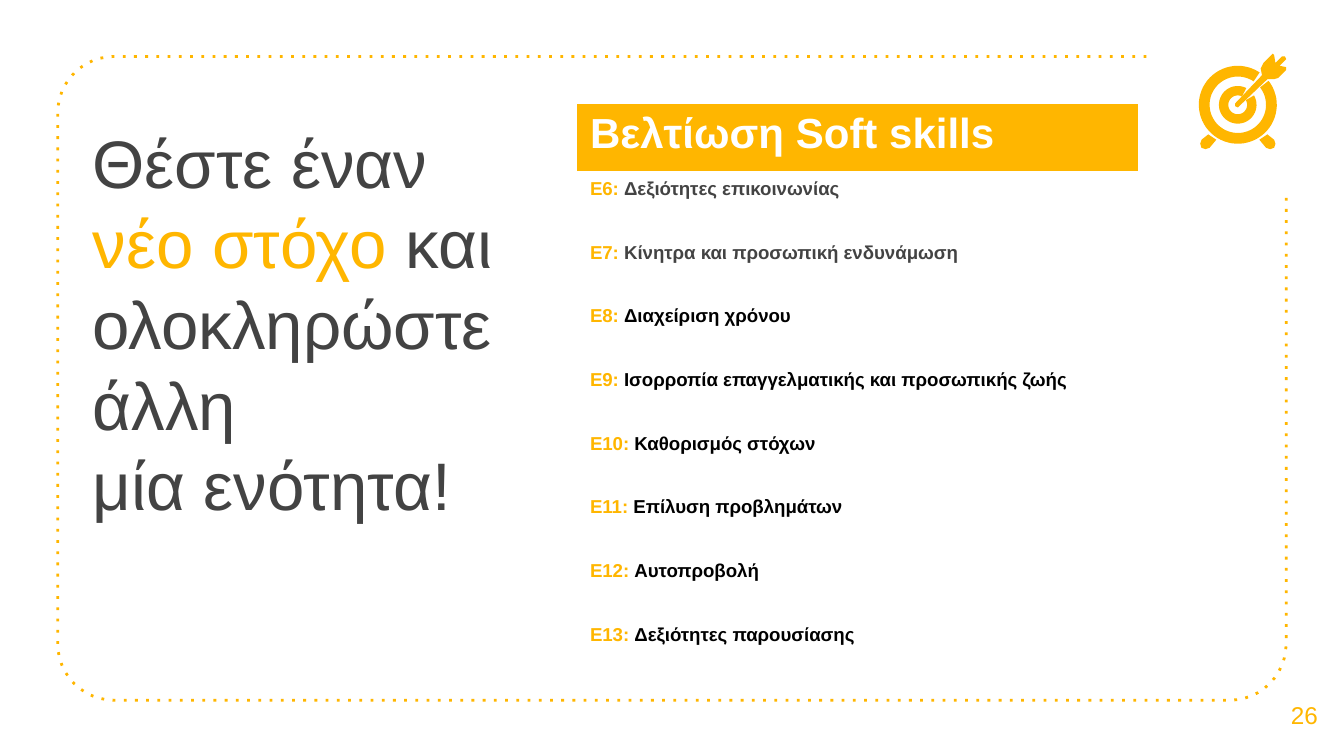
"""Build the soft skills goal slide with its dotted frame, target icon and unit table."""
import math
from pptx import Presentation, util as u
from pptx.dml.color import RGBColor
from pptx.enum import dml, text

GOLD = RGBColor(0xFF, 0xB6, 0x00)
GREY = RGBColor(0x43, 0x43, 0x43)
BLACK = RGBColor(0, 0, 0)
WHITE = RGBColor(0xFF, 0xFF, 0xFF)
FONT = "Arial"

TITLE = [
    [("Θέστε έναν\u00a0", GREY)],
    [("νέο στόχο ", GOLD), ("και", GREY)],
    [("ολοκληρώστε\u00a0άλλη μία\u00a0ενότητα!", GREY)],
]
HEAD = "Βελτίωση\u00a0Soft skills"
UNITS = [
    ("Δεξιότητες επικοινωνίας", GREY),
    ("Κίνητρα και προσωπική ενδυνάμωση", GREY),
    ("Διαχείριση χρόνου", BLACK),
    ("Ισορροπία επαγγελματικής και προσωπικής ζωής", BLACK),
    ("Καθορισμός στόχων", BLACK),
    ("Επίλυση προβλημάτων", BLACK),
    ("Αυτοπροβολή", BLACK),
    ("Δεξιότητες παρουσίασης", BLACK),
]
FIRST = 6
PAGE = "26"

MID = (9.21, 0.78)
RINGS = [(0.29, 0.21, 38, 56), (0.14, 0.07, 30, 63)]
FOOT = [(8.99, 1), (8.94, 1.04), (8.93, 1.07), (8.94, 1.1), (8.97, 1.11),
        (9, 1.1), (9.05, 1.04)]
DART = [(9.47, 0.4), (9.4, 0.47), (9.38, 0.51), (9.39, 0.56), (9.19, 0.77),
        (9.19, 0.79), (9.21, 0.8), (9.43, 0.59), (9.48, 0.59), (9.51, 0.58),
        (9.57, 0.52), (9.57, 0.5), (9.52, 0.49), (9.57, 0.44), (9.56, 0.42),
        (9.54, 0.42), (9.49, 0.47), (9.48, 0.41)]


def arc(mid, r, start, end, steps):
    turns = [math.radians(start + (end - start) * i / steps) for i in range(steps + 1)]
    return [(mid[0] + r * math.cos(t), mid[1] - r * math.sin(t)) for t in turns]


def draw(slide, pts, close=True):
    pts = [(u.Inches(x), u.Inches(y)) for x, y in pts]
    path = slide.shapes.build_freeform(*pts[0])
    path.add_line_segments(pts[1:], close=close)
    shape = path.convert_to_shape()
    shape.shadow.inherit = False
    return shape


def write(para, words, size, color, bold=False):
    run = para.add_run()
    run.text = words
    font = run.font
    font.name, font.size, font.bold = FONT, u.Pt(size), bold
    font.color.rgb = color


def add_frame(slide):
    left, top, right, low, r = 0.43, 0.42, 9.57, 5.21, 0.42
    pts = [(8.53, top)]
    pts += arc((left + r, top + r), r, 90, 180, 12)
    pts += arc((left + r, low - r), r, 180, 270, 12)
    pts += arc((right - r, low - r), r, 270, 360, 12)
    pts.append((right, 1.46))
    frame = draw(slide, pts, False)
    frame.fill.background()
    frame.line.color.rgb = GOLD
    frame.line.width = u.Pt(1.5)
    frame.line.dash_style = dml.MSO_LINE.ROUND_DOT
    frame.line._ln.xpath("a:prstDash")[0].set("val", "dot")


def add_icon(slide):
    parts = [arc(MID, out, end, start + 360, 60) + arc(MID, hole, start + 360, end, 60)
             for out, hole, start, end in RINGS]
    parts += [FOOT, [(2 * MID[0] - x, y) for x, y in FOOT], DART]
    for pts in parts:
        part = draw(slide, pts)
        part.fill.solid()
        part.fill.fore_color.rgb = GOLD
        part.line.fill.background()


def place(shape, left, top, width, height, anchor):
    shape.left, shape.top = u.Inches(left), u.Inches(top)
    shape.width, shape.height = u.Inches(width), u.Inches(height)
    body = shape.text_frame
    body.word_wrap = True
    body.auto_size = text.MSO_AUTO_SIZE.NONE
    body.vertical_anchor = anchor
    body.margin_left = body.margin_right = u.Inches(0.1)
    body.margin_top = body.margin_bottom = u.Inches(0.1)
    return body.paragraphs[0]


def add_title(slide):
    para = place(slide.shapes.title, 0.59, 0.8, 3.39, 1.44, text.MSO_ANCHOR.TOP)
    para.alignment = text.PP_ALIGN.LEFT
    para.line_spacing = 1.0
    for i, line in enumerate(TITLE):
        if i:
            para.add_line_break()
        for words, color in line:
            write(para, words, 36, color)


def add_page(slide):
    box = slide.shapes.add_textbox(0, 0, 0, 0)
    para = place(box, 9.41, 5.02, 0.59, 0.6, text.MSO_ANCHOR.MIDDLE)
    para.alignment = text.PP_ALIGN.CENTER
    write(para, PAGE, 13, GOLD)


def add_units(slide):
    count = len(UNITS)
    full, tall = 4.3, 0.51
    step = (full - tall) / count
    table = slide.shapes.add_table(
        count + 1, 1, u.Inches(4.29), u.Inches(0.77),
        u.Inches(4.18), u.Inches(full)).table
    table.first_row = table.horz_banding = False
    for i, row in enumerate(table.rows):
        row.height = u.Inches(step if i else tall)
        cell = row.cells[0]
        para = cell.text_frame.paragraphs[0]
        if i:
            cell.fill.background()
            words, color = UNITS[i - 1]
            write(para, f"Ε{FIRST + i - 1}:\u00a0", 10, GOLD, True)
            write(para, words, 10, color, True)
        else:
            cell.fill.solid()
            cell.fill.fore_color.rgb = GOLD
            write(para, HEAD, 22.5, WHITE, True)


def main():
    deck = Presentation()
    deck.slide_width = u.Inches(10)
    deck.slide_height = deck.slide_width * 9 // 16
    slide = deck.slides.add_slide(deck.slide_layouts[5])
    add_frame(slide)
    add_title(slide)
    add_page(slide)
    add_icon(slide)
    add_units(slide)
    deck.save("out.pptx")


if __name__ == "__main__":
    main()
